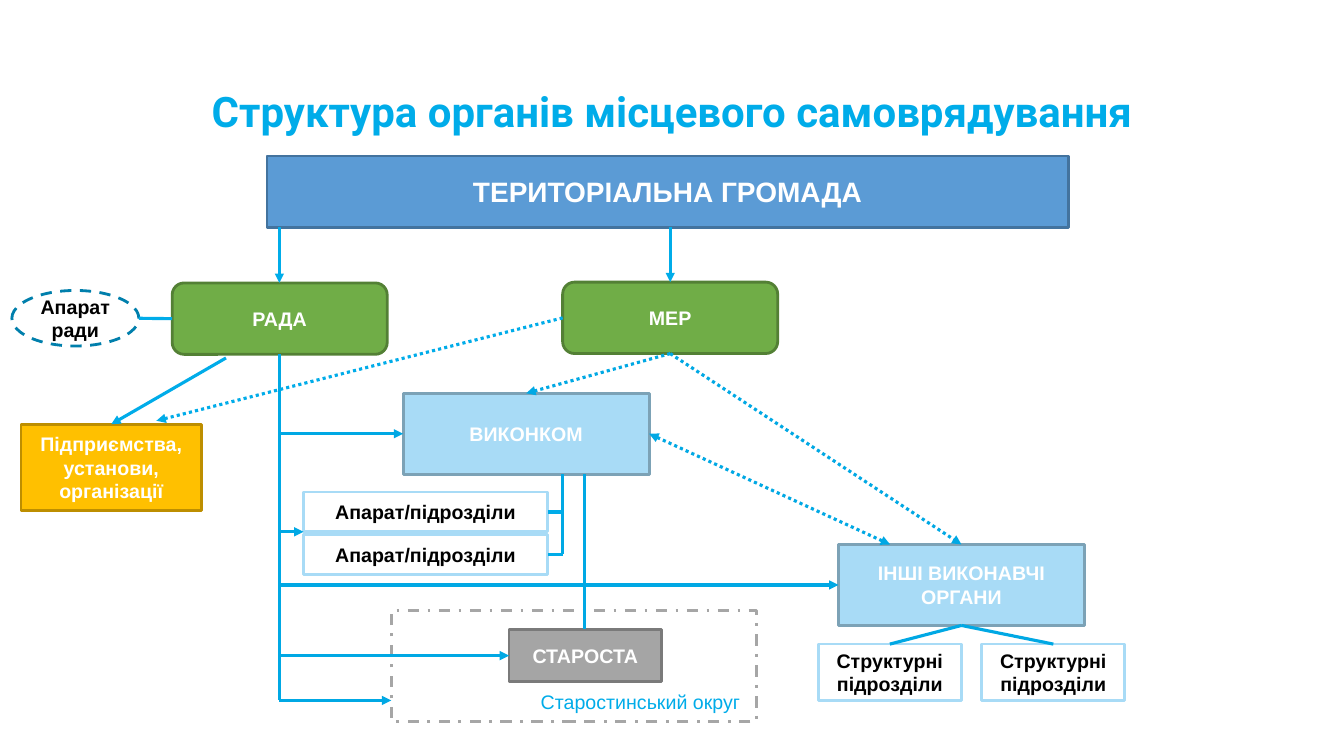
from lxml import etree
from pptx import Presentation
from pptx.dml.color import RGBColor
from pptx.enum.dml import MSO_LINE
from pptx.enum.shapes import MSO_CONNECTOR, MSO_SHAPE
from pptx.enum.text import MSO_ANCHOR, PP_ALIGN
from pptx.oxml.ns import qn
from pptx.util import Cm, Pt

RECT, ROUND, OVAL = MSO_SHAPE.RECTANGLE, MSO_SHAPE.ROUNDED_RECTANGLE, MSO_SHAPE.OVAL
DASH, DASH_DOT, DOTS = MSO_LINE.DASH, MSO_LINE.DASH_DOT, MSO_LINE.ROUND_DOT
CENTER, RIGHT = PP_ALIGN.CENTER, PP_ALIGN.RIGHT
MIDDLE, BOTTOM = MSO_ANCHOR.MIDDLE, MSO_ANCHOR.BOTTOM
STRAIGHT = MSO_CONNECTOR.STRAIGHT

# Content
TITLE = "Структура органів місцевого самоврядування"
WHITE, BLACK, CYAN, BLUE = "FFFFFF", "000000", "00ACE9", "00A8E4"
# Styles: preset, fill, outline, dash, text colour
STYLES = {
    "community": (RECT, "5B9BD5", "43739E", None, WHITE),
    "power": (ROUND, "70AD47", "538035", None, WHITE),
    "office": (OVAL, None, "007FAC", DASH, BLACK),
    "executive": (RECT, "A8DBF6", "7CA2B6", None, WHITE),
    "unit": (RECT, WHITE, "A8DBF6", None, BLACK),
    "enterprise": (RECT, "FFC000", "BD8E00", None, WHITE),
    "district": (RECT, None, "A6A6A6", DASH_DOT, CYAN),
    "elder": (RECT, "A5A5A5", "7A7A7A", None, WHITE),
}
# Boxes: style, text, (left, top, width, height) in cm
BOXES = {
    "community": ("community", "ТЕРИТОРІАЛЬНА ГРОМАДА", (6.73, 3.93, 20.19, 1.8)),
    "council": ("power", "РАДА", (4.34, 7.13, 5.42, 1.8)),
    "mayor": ("power", "МЕР", (14.18, 7.11, 5.42, 1.8)),
    "office": ("office", "Апарат ради", (0.3, 7.32, 3.2, 1.4)),
    "committee": ("executive", "ВИКОНКОМ", (10.16, 9.91, 6.2, 2.04)),
    "others": ("executive", "ІНШІ ВИКОНАВЧІ ОРГАНИ", (21.13, 13.72, 6.2, 2.04)),
    "enterprise": ("enterprise", "Підприємства, установи, організації",
                   (0.53, 10.69, 4.55, 2.18)),
    "district": ("district", "Старостинський округ", (9.86, 15.39, 9.2, 2.79)),
    "elder": ("elder", "СТАРОСТА", (12.83, 15.86, 3.84, 1.32)),
}
for i in range(2):
    BOXES[f"staff{i}"] = ("unit", "Апарат/підрозділи", (7.65, 12.4 + 1.07 * i, 6.15, 1))
    BOXES[f"division{i}"] = ("unit", "Структурні підрозділи",
                             (20.62 + 4.12 * i, 16.23, 3.61, 1.42))
TRUNK_X, STAFF_X, ELDER_X = 7.04, 14.18, 14.73


def at(name, fx, fy):
    """Point at the given fractions of a box's width and height."""
    x, y, w, h = BOXES[name][2]
    return x + w * fx, y + h * fy


def rgb(color):
    return RGBColor.from_string(color)


def write(tf, text, size=14, color=WHITE, bold=True, font="Arial",
          align=CENTER, anchor=MIDDLE):
    tf.word_wrap = True
    tf.vertical_anchor = anchor
    p = tf.paragraphs[0]
    p.alignment = align
    r = p.add_run()
    r.text = text
    r.font.name, r.font.size, r.font.bold = font, Pt(size), bold
    r.font.color.rgb = rgb(color)
    return p


def add_box(s, style, text, frame):
    preset, fill, outline, dash, color = STYLES[style]
    sp = s.shapes.add_shape(preset, *map(Cm, frame))
    sp.shadow.inherit = False
    if fill:
        sp.fill.solid()
        sp.fill.fore_color.rgb = rgb(fill)
    else:
        sp.fill.background()
    sp.line.color.rgb = rgb(outline)
    sp.line.width = Pt(2)
    if dash:
        sp.line.dash_style = dash
    tf = sp.text_frame
    if style == "district":
        tf.margin_right, tf.margin_bottom = Cm(0.4), Cm(0.2)
        write(tf, text, color=color, bold=False, align=RIGHT, anchor=BOTTOM)
        return
    if style == "office":
        tf.margin_left = tf.margin_right = 0
    write(tf, text, size=20 if style == "community" else 14, color=color)


def add_line(s, start, end, color=BLUE, dash=None, ends=()):
    c = s.shapes.add_connector(STRAIGHT, *map(Cm, start + end))
    c.line.color.rgb = rgb(color)
    c.line.width = Pt(2.25)
    if dash:
        c.line.dash_style = dash
    ln = c.line._get_or_add_ln()
    for end_tag in ends:
        etree.SubElement(ln, qn(end_tag), type="triangle")
    etree.SubElement(c._element.spPr, qn("a:effectLst"))


prs = Presentation()
prs.slide_width, prs.slide_height = Cm(33.87), Cm(19.05)
s = prs.slides.add_slide(prs.slide_layouts[5])

# Title
title = s.shapes.title
title.left, title.top, title.width, title.height = map(Cm, (2.34, 1.02, 29.21, 3.68))
write(title.text_frame, TITLE, size=30, color=CYAN, font="Roboto").line_spacing = 0.9

# Boxes
for box in BOXES.values():
    add_box(s, *box)

ARROW, BOTH = ("a:tailEnd",), ("a:headEnd", "a:tailEnd")
# Community to council and mayor, council to its office and enterprises
community_y = at("community", 0, 1)[1]
for x, name in ((TRUNK_X, "council"), (at("mayor", 0.5, 0)[0], "mayor")):
    add_line(s, (x, community_y), (x, at(name, 0, 0)[1]), CYAN, ends=ARROW)
add_line(s, at("council", 0, 0.5), at("office", 1, 0.5), CYAN)
add_line(s, at("council", 0.25, 1.05), at("enterprise", 0.5, 0), CYAN, ends=ARROW)

# Council trunk with a branch to each body
trunk_end = at("district", 0, 0.81)
add_line(s, (TRUNK_X, at("council", 0, 1)[1]), (TRUNK_X, trunk_end[1]))
branches = [at(name, 0, 0.5) for name in ("committee", "others", "elder")]
for end in branches + [at("staff0", 0, 1), trunk_end]:
    add_line(s, (TRUNK_X, end[1]), end, ends=ARROW)

# Dotted links
mayor_base = at("mayor", 0.5, 1)
add_line(s, at("mayor", 0, 0.5), at("enterprise", 0.75, -0.04), CYAN, DOTS, ARROW)
add_line(s, mayor_base, at("committee", 0.5, 0), dash=DOTS, ends=ARROW)
add_line(s, mayor_base, at("others", 0.5, 0), dash=DOTS, ends=ARROW)
add_line(s, at("committee", 1, 0.5), at("others", 0.21, 0), dash=DOTS, ends=BOTH)

# Committee to its staff and the elder, other bodies to their divisions
committee_y = at("committee", 0, 1)[1]
add_line(s, (STAFF_X, committee_y), (STAFF_X, at("staff1", 0, 0.5)[1]))
add_line(s, (ELDER_X, committee_y), (ELDER_X, at("elder", 0, 0)[1]))
for i in range(2):
    staff = at(f"staff{i}", 1, 0.5)
    add_line(s, (STAFF_X, staff[1]), staff, CYAN)
    add_line(s, at("others", 0.5, 1), at(f"division{i}", 0.5, 0))

prs.save("out.pptx")
